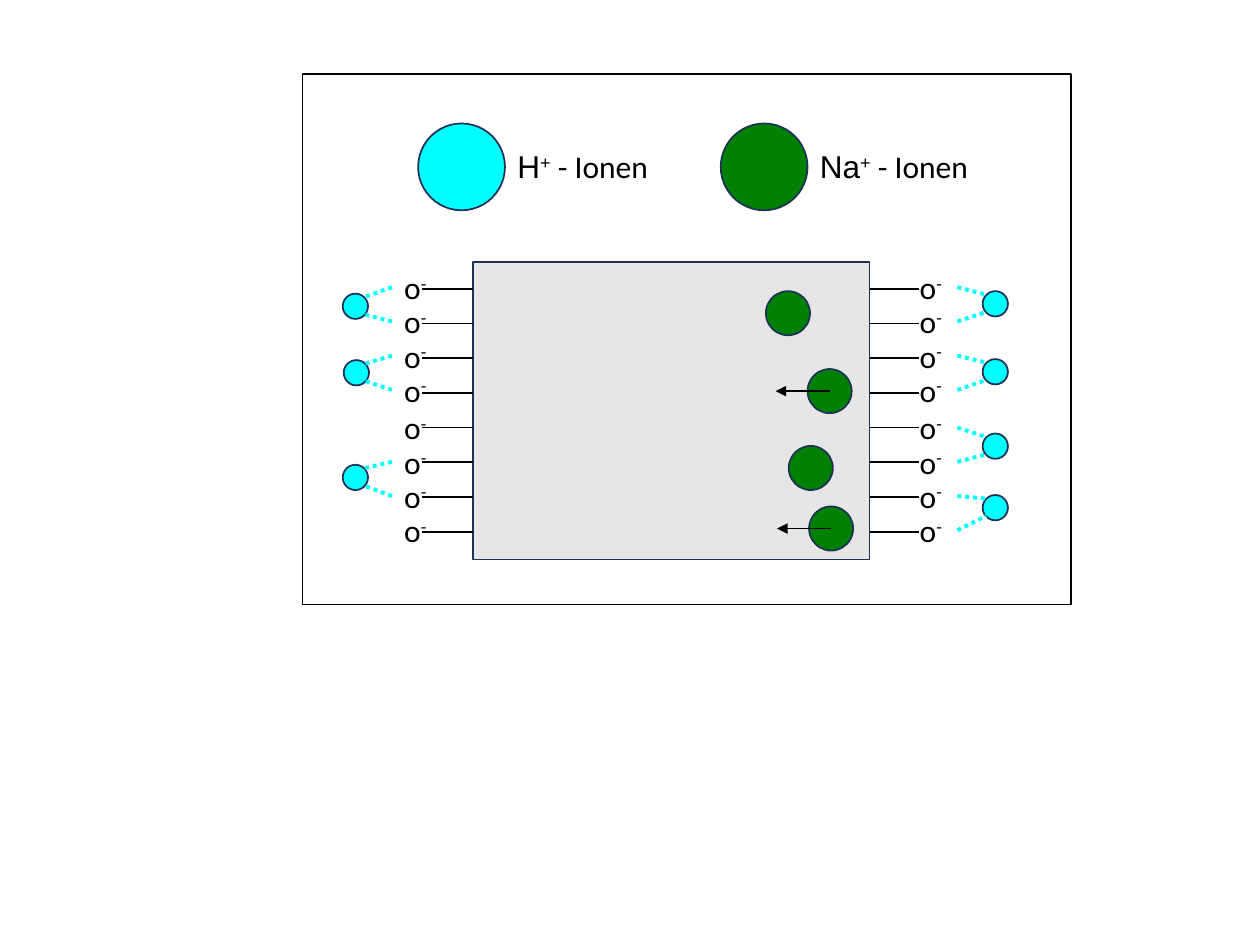
from dataclasses import dataclass

from lxml import etree
from pptx import Presentation
from pptx.dml.color import RGBColor
from pptx.enum.dml import MSO_LINE
from pptx.enum.shapes import MSO_CONNECTOR, MSO_SHAPE
from pptx.enum.text import MSO_AUTO_SIZE
from pptx.oxml.ns import qn
from pptx.util import Cm, Pt

STRAIGHT = MSO_CONNECTOR.STRAIGHT
RECTANGLE = MSO_SHAPE.RECTANGLE
OVAL = MSO_SHAPE.OVAL
ROUND_DOT = MSO_LINE.ROUND_DOT
FIT_SHAPE = MSO_AUTO_SIZE.SHAPE_TO_FIT_TEXT


@dataclass(frozen=True)
class Theme:
    black: str = "000000"
    outline: str = "1E3256"
    particle: str = "E7E6E6"
    hydrogen: str = "00FFFF"
    sodium: str = "008000"
    body_font: str = "Calibri"
    symbol_font: str = "Arial"
    text_size: float = 18
    thin: float = 1
    thick: float = 2.25


class Diagram:
    def __init__(self, slide, theme):
        self.slide = slide
        self.theme = theme

    def shape(self, kind, left, top, width, height, fill=None, line=None):
        shape = self.slide.shapes.add_shape(kind, Cm(left), Cm(top), Cm(width), Cm(height))
        shape.shadow.inherit = False
        if fill:
            shape.fill.solid()
            shape.fill.fore_color.rgb = RGBColor.from_string(fill)
        else:
            shape.fill.background()
        shape.line.color.rgb = RGBColor.from_string(line or self.theme.outline)
        shape.line.width = Pt(self.theme.thin)

    def ion(self, left, top, diameter, fill):
        self.shape(OVAL, left, top, diameter, diameter, fill)

    def line(self, start, end, arrow=False, dotted=False):
        theme = self.theme
        points = [Cm(value) for value in (*start, *end)]
        connector = self.slide.shapes.add_connector(STRAIGHT, *points)
        color = theme.hydrogen if dotted else theme.black
        connector.line.color.rgb = RGBColor.from_string(color)
        connector.line.width = Pt(theme.thick if dotted else theme.thin)
        if dotted:
            connector.line.dash_style = ROUND_DOT
        properties = connector.element.spPr
        if arrow:
            etree.SubElement(properties.find(qn("a:ln")), qn("a:tailEnd"), type="triangle")
        etree.SubElement(properties, qn("a:effectLst"))

    def label(self, left, top, width, symbol, charge, suffix=""):
        theme = self.theme
        box = self.slide.shapes.add_textbox(Cm(left), Cm(top), Cm(width), Cm(1.02))
        frame = box.text_frame
        frame.word_wrap = True
        frame.auto_size = FIT_SHAPE
        paragraph = frame.paragraphs[0]
        paragraph.font.size = Pt(theme.text_size)
        paragraph.font.name = theme.body_font
        paragraph.font.color.rgb = RGBColor.from_string(theme.black)
        for text in filter(None, (symbol, charge, suffix)):
            run = paragraph.add_run()
            run.text = text
            if suffix and text != suffix:
                run.font.name = theme.symbol_font
            if text == charge:
                run._r.get_or_add_rPr().set("baseline", "30000")


def oxygen_top(index):
    return 5.28 + 0.69 * index + (0.07 if index >= 4 else 0)


def draw_oxygen_side(diagram, bond_start, bond_end, label_left):
    for index in range(8):
        bond_y = 5.82 + 0.7 * index
        diagram.line((bond_start, bond_y), (bond_end, bond_y))
        diagram.label(label_left, oxygen_top(index), 1, "o", "-")


def draw_hydrogen(diagram, left, top, first_oxygen, anchor_offset, oxygen_x):
    diagram.ion(left, top, 0.51, diagram.theme.hydrogen)
    for index, offset in enumerate((0.07, 0.42)):
        oxygen_y = oxygen_top(first_oxygen + index) + 0.51
        diagram.line((oxygen_x, oxygen_y), (left + anchor_offset, top + offset), dotted=True)


def draw_sodium(diagram, left, top, moving):
    diameter = 0.89
    diagram.ion(left, top, diameter, diagram.theme.sodium)
    if moving:
        center_x, center_y = left + diameter / 2, top + diameter / 2
        diagram.line((center_x, center_y), (center_x - 1.09, center_y), arrow=True)


def main():
    presentation = Presentation()
    presentation.slide_width = Cm(25.4)
    presentation.slide_height = Cm(19.05)
    slide = presentation.slides.add_slide(presentation.slide_layouts[6])
    theme = Theme()
    diagram = Diagram(slide, theme)

    diagram.shape(RECTANGLE, 6.1, 1.5, 15.49, 10.69, line=theme.black)
    diagram.shape(RECTANGLE, 9.53, 5.28, 8, 6, theme.particle)

    legend = ((8.43, 4.95, "H", theme.hydrogen), (14.53, 4.01, "Na", theme.sodium))
    for left, width, symbol, color in legend:
        diagram.ion(left, 2.49, 1.75, color)
        diagram.label(left + 1.75, 2.84, width, symbol, "+", " - Ionen")

    draw_oxygen_side(diagram, 17.53, 18.52, 18.29)
    draw_oxygen_side(diagram, 8.51, 9.53, 7.9)

    for left, top, first_oxygen in ((6.91, 5.92, 0), (6.93, 7.26, 2), (6.91, 9.37, 5)):
        draw_hydrogen(diagram, left, top, first_oxygen, 0.43, 7.9)
    for top, first_oxygen in ((5.87, 0), (7.24, 2), (8.74, 4), (9.98, 6)):
        draw_hydrogen(diagram, 19.81, top, first_oxygen, 0.07, 19.3)

    sodium_ions = (
        (15.44, 5.87, False),
        (16.28, 7.44, True),
        (15.9, 8.99, False),
        (16.31, 10.21, True),
    )
    for left, top, moving in sodium_ions:
        draw_sodium(diagram, left, top, moving)

    presentation.save("out.pptx")


if __name__ == "__main__":
    main()
